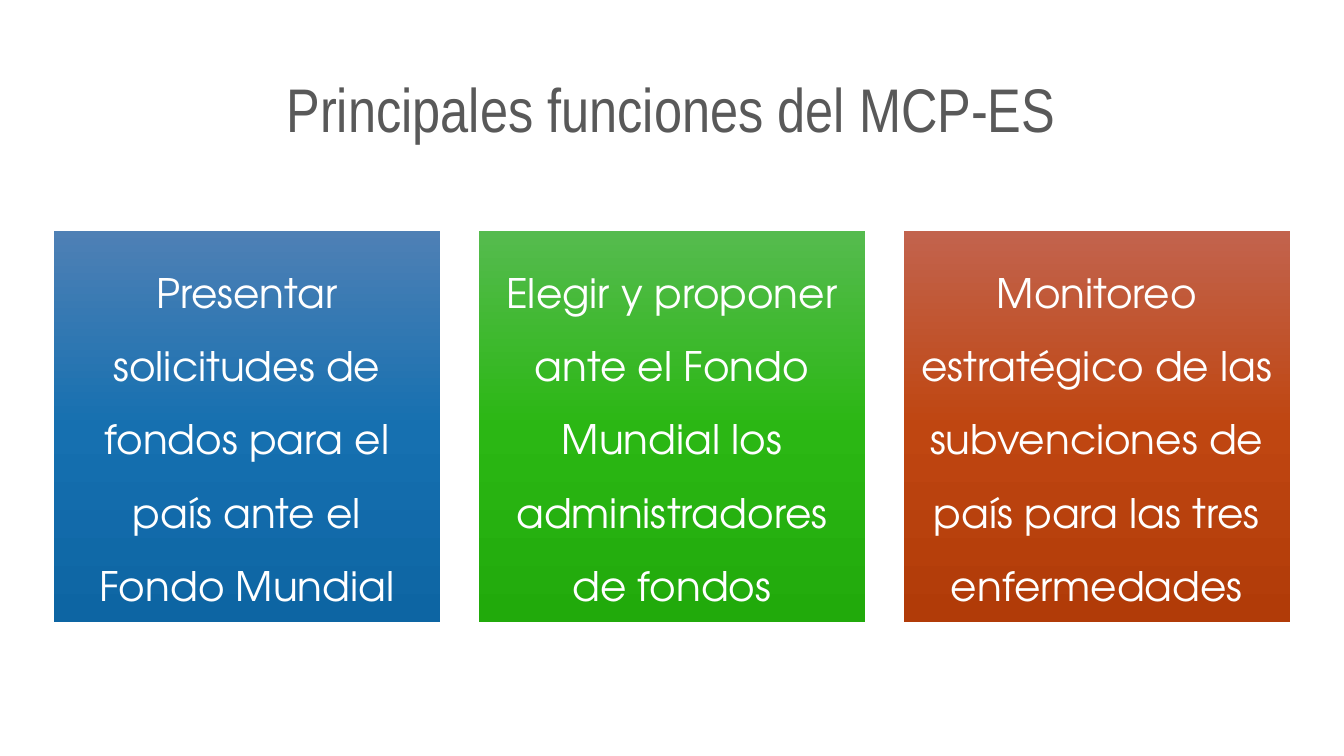
"""Build the slide on the main functions of the MCP-ES."""
from copy import deepcopy
from dataclasses import dataclass

from pptx import Presentation
from pptx import util as u
from pptx.dml.color import RGBColor
from pptx.enum import shapes, text
from pptx.oxml.ns import qn

PX = 914400 / 100.8
WHITE = RGBColor(0xFF, 0xFF, 0xFF)
GRAY = RGBColor(0x59, 0x59, 0x59)
BLUES = (RGBColor(0x4E, 0x80, 0xB5), RGBColor(0x16, 0x70, 0xB0), RGBColor(0x0D, 0x65, 0xA3))
GREENS = (RGBColor(0x55, 0xBB, 0x4E), RGBColor(0x2B, 0xB7, 0x14), RGBColor(0x21, 0xAA, 0x0B))
REDS = (RGBColor(0xC2, 0x63, 0x4D), RGBColor(0xBF, 0x46, 0x11), RGBColor(0xB1, 0x3B, 0x08))
LEFT, TOP, WIDTH, HEIGHT, STEP = 54, 231, 386, 391, 425


@dataclass(frozen=True)
class Card:
    """Wording and gradient of one function."""
    words: str
    tones: tuple[RGBColor, ...]


CARDS = (
    Card("Presentar solicitudes de fondos para el país ante el Fondo Mundial", BLUES),
    Card("Elegir y proponer ante el Fondo Mundial los administradores de fondos", GREENS),
    Card("Monitoreo estratégico de las subvenciones de país para las tres enfermedades", REDS),
)


def px(*sizes: int) -> list[u.Emu]:
    """Turn pixels into EMU."""
    return [u.Emu(round(size * PX)) for size in sizes]


def apply(item, values: dict) -> None:
    """Set each named attribute of an item."""
    for name, value in values.items():
        setattr(item, name, value)


def write(shape, words: str, inset: int, color: RGBColor, font: dict, lines: dict) -> None:
    """Put one centred paragraph into a shape."""
    frame = shape.text_frame
    sides = ("margin_left", "margin_top", "margin_right", "margin_bottom")
    apply(frame, {"word_wrap": True, "vertical_anchor": text.MSO_ANCHOR.MIDDLE,
                  **dict.fromkeys(sides, px(inset)[0])})
    para = frame.paragraphs[0]
    apply(para, {"alignment": text.PP_ALIGN.CENTER, **lines})
    run = para.add_run()
    run.text = words
    apply(run.font, font)
    run.font.color.rgb = color


def shade(shape, tones: tuple[RGBColor, ...]) -> None:
    """Fill a shape with evenly spaced tones from top to bottom."""
    fill = shape.fill
    fill.gradient()
    fill.gradient_angle = 270
    stops = next(shape.element.iter(qn("a:gsLst")))
    stops.append(deepcopy(stops[-1]))
    for rank, (stop, tone) in enumerate(zip(fill.gradient_stops, tones)):
        stop.color.rgb = tone
        stop.position = rank / (len(tones) - 1)


def draw(slide, card: Card, rank: int) -> None:
    """Draw one card in its column."""
    box = slide.shapes.add_shape(shapes.MSO_SHAPE.RECTANGLE,
                                 *px(LEFT + rank * STEP, TOP, WIDTH, HEIGHT))
    box.shadow.inherit = False
    box.line.fill.background()
    shade(box, card.tones)
    write(box, card.words, 12, WHITE,
          {"name": "TeX Gyre Adventor", "size": u.Pt(29)},
          {"line_spacing": 1.5, "space_after": u.Pt(10)})


def main() -> None:
    """Build and save the slide."""
    deck = Presentation()
    deck.slide_width, deck.slide_height = px(1344, 756)
    slide = deck.slides.add_slide(deck.slide_layouts[6])
    title = slide.shapes.add_textbox(*px(92, 40, 1159, 146))
    write(title, "Principales funciones del MCP-ES", 7, GRAY,
          {"name": "Arial Narrow", "size": u.Pt(44)}, {"line_spacing": 0.9})
    for rank, card in enumerate(CARDS):
        draw(slide, card, rank)
    deck.save("out.pptx")


if __name__ == "__main__":
    main()
